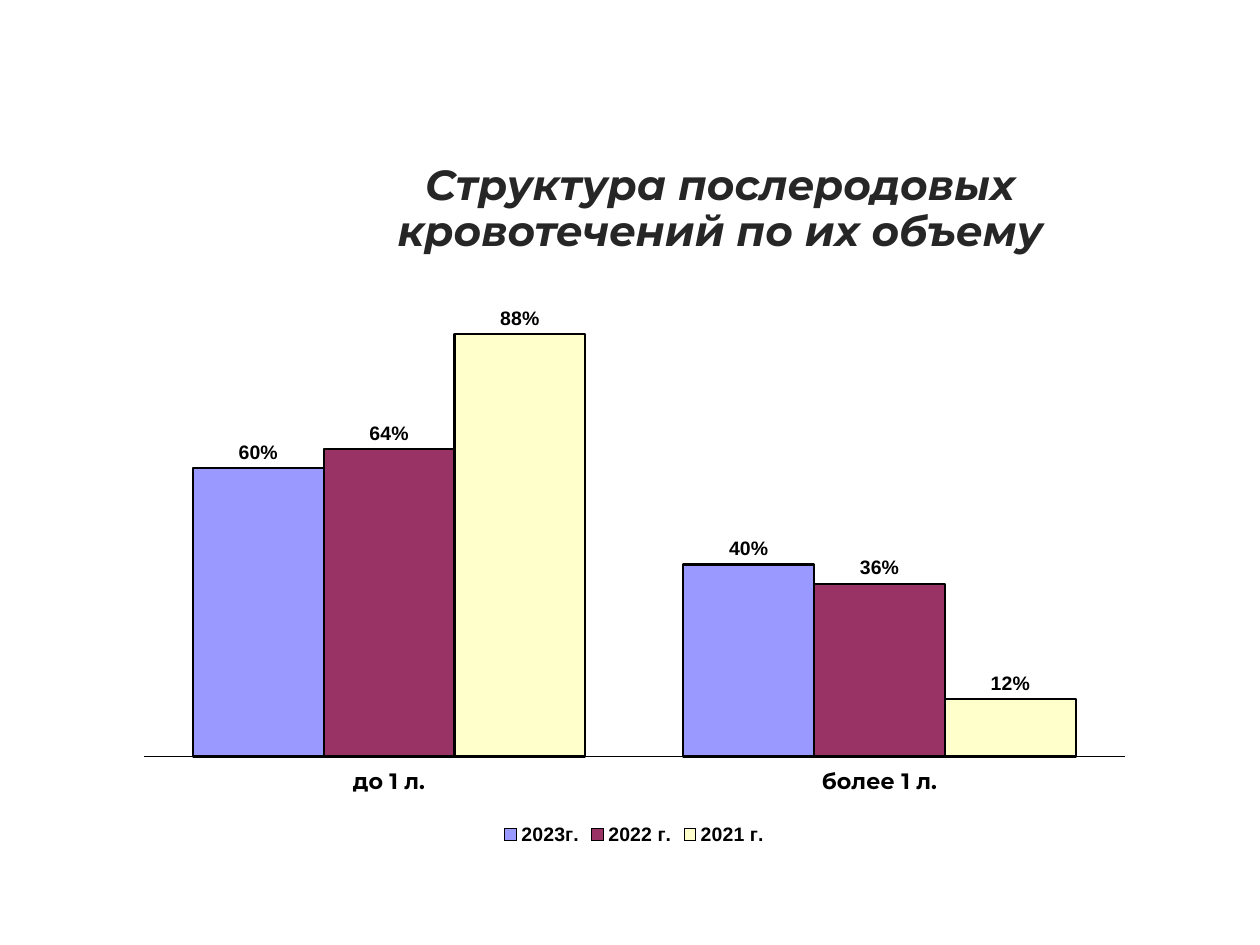
from lxml import etree
from pptx import Presentation
from pptx.chart.data import CategoryChartData
from pptx.dml.color import RGBColor
from pptx.enum.chart import (XL_CHART_TYPE, XL_LABEL_POSITION, XL_LEGEND_POSITION,
                             XL_TICK_LABEL_POSITION, XL_TICK_MARK)
from pptx.enum.text import MSO_ANCHOR, PP_ALIGN
from pptx.oxml.ns import qn
from pptx.util import Inches, Pt

TITLE = "Структура послеродовых кровотечений по их объему"
CATEGORIES = ["до 1 л.", "более 1 л."]
SERIES = [
    ("2023г.", (0.6, 0.4), "blue"),
    ("2022 г.", (0.64, 0.36), "plum"),
    ("2021 г.", (0.88, 0.12), "cream"),
]
COLORS = {"title": "262626", "black": "000000",
          "blue": "9999FF", "plum": "993366", "cream": "FFFFCC"}
PLOT_AREA = {"x": 0.02, "y": 0.02, "w": 0.96, "h": 0.82}  # fractions of the chart


def rgb(name):
    return RGBColor.from_string(COLORS[name])


def set_font(font, size, name="Arial", color="black", bold=True, italic=False):
    font.size, font.name, font.bold, font.italic = Pt(size), name, bold, italic
    font.color.rgb = rgb(color)


def set_line(line, width):
    line.color.rgb = rgb("black")
    line.width = Pt(width)


def add_text(s, text, box, align=PP_ALIGN.CENTER, spacing=0.9, **fmt):
    tf = s.shapes.add_textbox(*map(Inches, box)).text_frame
    tf.word_wrap = True
    tf.vertical_anchor = MSO_ANCHOR.MIDDLE
    p = tf.paragraphs[0]
    p.alignment, p.line_spacing = align, spacing
    r = p.add_run()
    r.text = text
    set_font(r.font, **fmt)


def place_plot(chart, area):
    """Fix the inner plot area at the given fractions of the chart."""
    plot_area = chart.plots[0]._element.getparent()
    for old in plot_area.findall(qn("c:layout")):
        plot_area.remove(old)
    layout = etree.Element(qn("c:layout"))
    manual = etree.SubElement(layout, qn("c:manualLayout"))
    values = {"layoutTarget": "inner", "xMode": "edge", "yMode": "edge", **area}
    for tag, value in values.items():
        etree.SubElement(manual, qn(f"c:{tag}")).set("val", str(value))
    plot_area.insert(0, layout)


def add_column_chart(s, box):
    data = CategoryChartData(number_format="0%")
    data.categories = CATEGORIES
    for name, values, _ in SERIES:
        data.add_series(name, values)
    chart = s.shapes.add_chart(XL_CHART_TYPE.COLUMN_CLUSTERED,
                               *map(Inches, box), data).chart
    set_font(chart.font, 11.1)
    chart.has_title = False
    chart.has_legend = True
    chart.legend.position = XL_LEGEND_POSITION.BOTTOM
    chart.legend.include_in_layout = False
    set_font(chart.legend.font, 11.1)

    axis = chart.category_axis
    axis.major_tick_mark = axis.minor_tick_mark = XL_TICK_MARK.NONE
    axis.tick_label_position = XL_TICK_LABEL_POSITION.LOW
    set_font(axis.tick_labels.font, 12.7, "Montserrat")
    set_line(axis.format.line, 0.32)

    axis = chart.value_axis
    axis.minimum_scale, axis.maximum_scale = 0, 1
    axis.has_major_gridlines = False
    axis.tick_labels.number_format = "0%"
    axis.tick_labels.number_format_is_linked = False
    axis.visible = False

    plot = chart.plots[0]
    plot.gap_width, plot.overlap = 75, 0
    plot.vary_by_categories = False
    for series, (_, _, color) in zip(plot.series, SERIES):
        series.format.fill.solid()
        series.format.fill.fore_color.rgb = rgb(color)
        set_line(series.format.line, 1.27)
        labels = series.data_labels
        labels.show_value = True
        labels.number_format = "0%"
        labels.number_format_is_linked = False
        labels.position = XL_LABEL_POSITION.OUTSIDE_END
        set_font(labels.font, 11.1)
    place_plot(chart, PLOT_AREA)


def main():
    prs = Presentation()
    prs.slide_width, prs.slide_height = Inches(10), Inches(7.5)
    s = prs.slides.add_slide(prs.slide_layouts[6])
    add_text(s, TITLE, (2.11, 1.14, 7.21, 1.05), size=24, name="Montserrat",
             color="title", italic=True)
    add_column_chart(s, (0.98, 2.1, 8.11, 4.65))
    prs.save("out.pptx")


if __name__ == "__main__":
    main()
